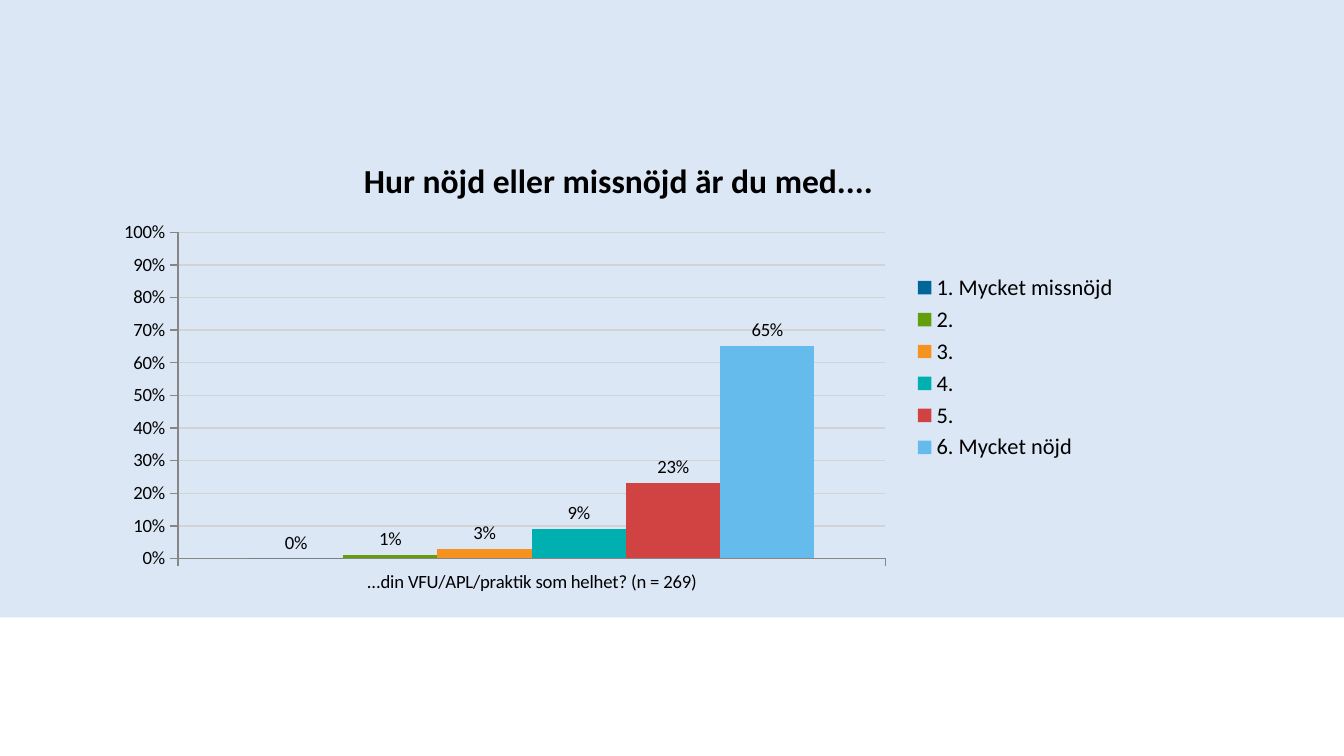
from pptx import Presentation
from pptx.chart.data import CategoryChartData
from pptx.dml.color import RGBColor
from pptx.enum.chart import XL_CHART_TYPE as ChartType
from pptx.enum.chart import XL_LABEL_POSITION as LabelPosition
from pptx.enum.chart import XL_LEGEND_POSITION as LegendPosition
from pptx.enum.chart import XL_TICK_MARK as TickMark
from pptx.enum.shapes import MSO_SHAPE as Shape
from pptx.oxml import parse_xml
from pptx.oxml.ns import nsdecls
from pptx.util import Pt

PX = 9525
FONT = "Calibri"
BLACK = RGBColor(0x00, 0x00, 0x00)
PALE_BLUE = RGBColor(0xDC, 0xE7, 0xF6)
GRID_GREY = RGBColor(0xD3, 0xD3, 0xD3)
AXIS_GREY = RGBColor(0x86, 0x86, 0x86)

TITLE = "Hur nöjd eller missnöjd är du med...."
QUESTION = "...din VFU/APL/praktik som helhet? (n = 269)"
ANSWERS = [
    ("1. Mycket missnöjd", 0, RGBColor(0x00, 0x66, 0x99)),
    ("2.", 0.01, RGBColor(0x64, 0x9E, 0x0B)),
    ("3.", 0.03, RGBColor(0xF6, 0x92, 0x1E)),
    ("4.", 0.09, RGBColor(0x00, 0xAF, 0xAF)),
    ("5.", 0.23, RGBColor(0xD1, 0x43, 0x43)),
    ("6. Mycket nöjd", 0.65, RGBColor(0x66, 0xBB, 0xED)),
]
PLOT_BOX = {"x": 0.07, "y": 0.21, "w": 0.69, "h": 0.7}


def emu(box):
    return [length * PX for length in box]


def set_font(font, size, bold=False):
    font.name = FONT
    font.size = Pt(size)
    font.bold = bold
    font.color.rgb = BLACK


def add_background(page, box):
    band = page.shapes.add_shape(Shape.RECTANGLE, *emu(box))
    band.shadow.inherit = False
    band.fill.solid()
    band.fill.fore_color.rgb = PALE_BLUE
    band.line.fill.background()


def format_axis(axis):
    axis.major_tick_mark = TickMark.OUTSIDE
    axis.minor_tick_mark = TickMark.NONE
    axis.format.line.color.rgb = AXIS_GREY
    axis.format.line.width = Pt(0.75)
    set_font(axis.tick_labels.font, 10)


def place_plot(chart):
    edges = "".join(f'<c:{key} val="{value}"/>' for key, value in PLOT_BOX.items())
    layout = parse_xml(
        f'<c:layout {nsdecls("c")}><c:manualLayout><c:layoutTarget val="inner"/>'
        f'<c:xMode val="edge"/><c:yMode val="edge"/>{edges}'
        "</c:manualLayout></c:layout>"
    )
    plot_area = chart.plots[0]._element.getparent()
    for old in plot_area.findall(layout.tag):
        plot_area.remove(old)
    plot_area.insert(0, layout)


def add_satisfaction_chart(page, box):
    data = CategoryChartData(number_format="0%")
    data.categories = [QUESTION]
    for name, share, _ in ANSWERS:
        data.add_series(name, [share])
    frame = page.shapes.add_chart(ChartType.COLUMN_CLUSTERED, *emu(box), data)
    chart = frame.chart
    set_font(chart.font, 18)

    chart.has_title = True
    heading = chart.chart_title.text_frame
    heading.text = TITLE
    set_font(heading.paragraphs[0].font, 18, bold=True)
    chart.chart_title.include_in_layout = False

    chart.has_legend = True
    chart.legend.position = LegendPosition.RIGHT
    chart.legend.include_in_layout = False
    set_font(chart.legend.font, 12)

    format_axis(chart.category_axis)
    values = chart.value_axis
    format_axis(values)
    values.minimum_scale = 0
    values.maximum_scale = 1
    values.major_unit = 0.1
    values.tick_labels.number_format = "0%"
    values.tick_labels.number_format_is_linked = False
    values.major_gridlines.format.line.color.rgb = GRID_GREY
    values.major_gridlines.format.line.width = Pt(0.75)

    plot = chart.plots[0]
    plot.gap_width = 150
    plot.overlap = 0
    plot.vary_by_categories = False
    for series, (_, _, color) in zip(plot.series, ANSWERS):
        series.format.fill.solid()
        series.format.fill.fore_color.rgb = color
        labels = series.data_labels
        labels.show_value = True
        labels.position = LabelPosition.OUTSIDE_END
        labels.number_format = "0%"
        labels.number_format_is_linked = False
        set_font(labels.font, 10)
    place_plot(chart)


def main():
    deck = Presentation()
    deck.slide_width, deck.slide_height = emu((960, 540))
    page = deck.slides.add_slide(deck.slide_layouts[6])
    add_background(page, (0, 0, 960, 441))
    add_satisfaction_chart(page, (76, 96, 732, 333))
    deck.save("out.pptx")


if __name__ == "__main__":
    main()
